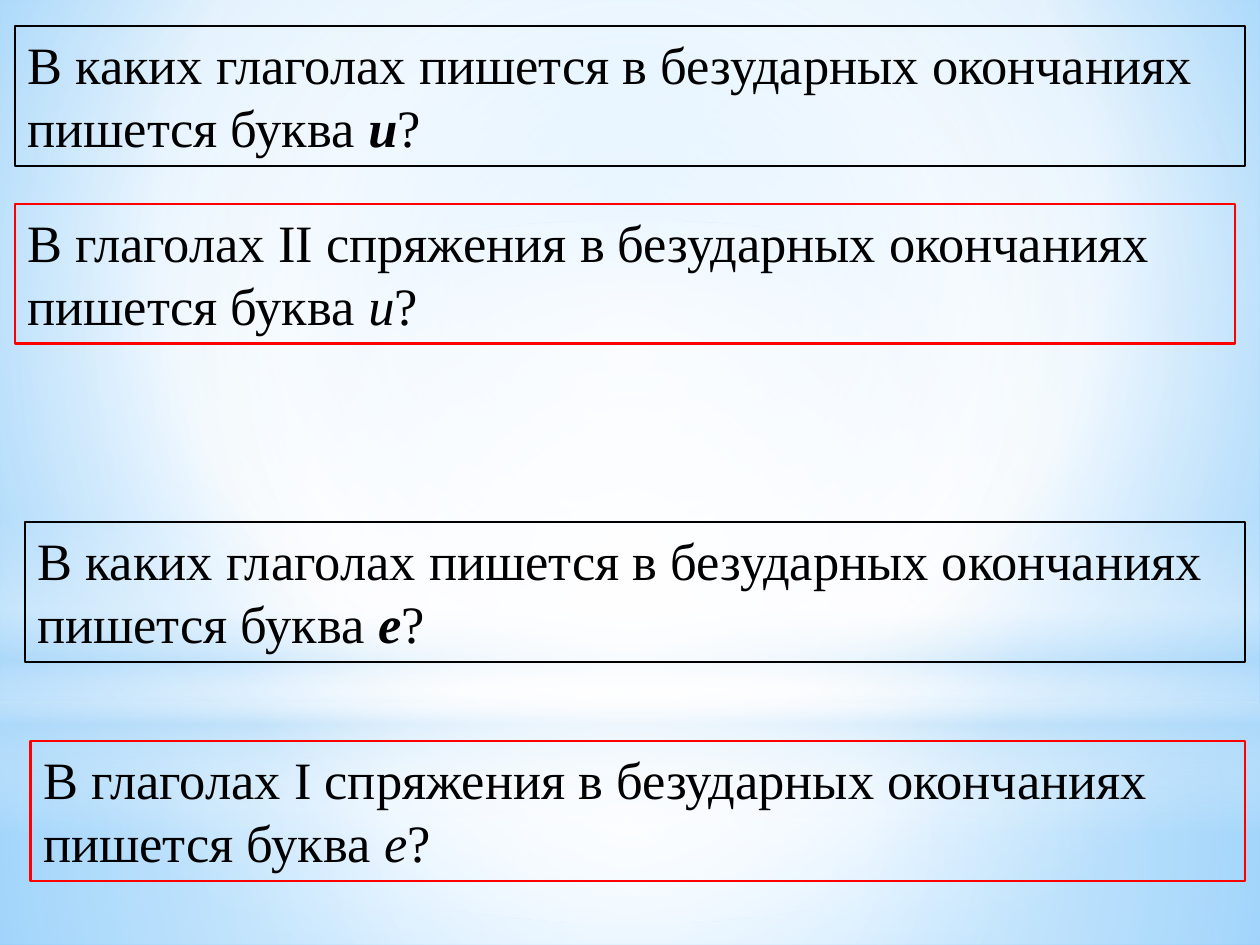
from lxml import etree
from pptx import Presentation
from pptx.dml.color import RGBColor
from pptx.enum.shapes import MSO_SHAPE
from pptx.enum.text import MSO_AUTO_SIZE
from pptx.oxml.ns import qn
from pptx.util import Cm, Pt

RECTANGLE, OVAL = MSO_SHAPE.RECTANGLE, MSO_SHAPE.OVAL
GROW = MSO_AUTO_SIZE.SHAPE_TO_FIT_TEXT
WIDTH, HEIGHT = 25.4, 19.05
BOX_HEIGHT = 2.82

COLORS = {
    "text": "000000", "question": "000000", "answer": "FF0000",
    "white": "FFFFFF", "pale": "B4DCFA", "sky": "9ED5FF", "blue": "5BB9FF",
}
LINE_WIDTHS = {"question": 1, "answer": 1.5}
LETTER_STYLES = {
    "question": {"bold": True, "italic": True},
    "answer": {"italic": True},
}
TEXT_STYLE = {"name": "Times New Roman", "size": Pt(30)}

QUESTION = "В каких глаголах пишется в безударных окончаниях пишется буква "
ANSWER = "В глаголах {} спряжения в безударных окончаниях пишется буква "
BOXES = [
    ("question", QUESTION, "и", 0.3, 0.53, 24.8),
    ("answer", ANSWER.format("II"), "и", 0.3, 4.11, 24.6),
    ("question", QUESTION, "е", 0.5, 10.52, 24.6),
    ("answer", ANSWER.format("I"), "е", 0.62, 14.94, 24.48),
]

CENTER = (50, 50, 50, 50)
BACKDROP = [(0, "sky", 100), (60, "white", 100), (100, "blue", 100)]
GLOWS = [
    (RECTANGLE, 14.17, 4.88, CENTER,
     [(0, "white", 91), (37, "white", 76), (100, "pale", 79)]),
    (RECTANGLE, 0, 14.17, CENTER,
     [(0, "white", 89), (48, "white", 62), (100, "pale", 79)]),
    (RECTANGLE, 10.46, 6.35, None,
     [(0, "white", 0), (29, "white", 30), (45, "pale", 40),
      (55, "white", 26), (65, "pale", 60), (100, "white", 0)]),
    (OVAL, 4.45, 14.17, CENTER, [(0, "white", 100), (56, "white", 0)]),
]


def add_part(parent, tag, **attributes):
    part = etree.SubElement(parent, qn(tag))
    for key, value in attributes.items():
        part.set(key, str(value))
    return part


def paint_gradient(owner, fill, stops, focus):
    fill.gradient()
    gradient = owner.element.find(".//" + qn("a:gradFill"))
    for child in list(gradient):
        gradient.remove(child)
    stop_list = add_part(gradient, "a:gsLst")
    for position, color, opacity in stops:
        stop = add_part(stop_list, "a:gs", pos=position * 1000)
        tint = add_part(stop, "a:srgbClr", val=COLORS[color])
        if opacity < 100:
            add_part(tint, "a:alpha", val=opacity * 1000)
    if focus:
        circle = add_part(gradient, "a:path", path="circle")
        edges = {side: edge * 1000 for side, edge in zip("ltrb", focus)}
        add_part(circle, "a:fillToRect", **edges)
    else:
        add_part(gradient, "a:lin", ang=90 * 60000, scaled=0)


def add_box(slide, role, sentence, letter, left, top, width):
    box = slide.shapes.add_textbox(Cm(left), Cm(top), Cm(width), Cm(BOX_HEIGHT))
    box.line.color.rgb = RGBColor.from_string(COLORS[role])
    box.line.width = Pt(LINE_WIDTHS[role])
    frame = box.text_frame
    frame.word_wrap = True
    frame.auto_size = GROW
    paragraph = frame.paragraphs[0]
    for wording, emphasis in ((sentence, {}), (letter, LETTER_STYLES[role]), ("?", {})):
        run = paragraph.add_run()
        run.text = wording
        for key, value in {**TEXT_STYLE, **emphasis}.items():
            setattr(run.font, key, value)
        run.font.color.rgb = RGBColor.from_string(COLORS["text"])


def main():
    deck = Presentation()
    deck.slide_width, deck.slide_height = Cm(WIDTH), Cm(HEIGHT)
    slide = deck.slides.add_slide(deck.slide_layouts[6])
    paint_gradient(slide, slide.background.fill, BACKDROP, (20, 10, 20, 60))
    for outline, top, height, focus, stops in GLOWS:
        glow = slide.shapes.add_shape(outline, 0, Cm(top), Cm(WIDTH), Cm(height))
        glow.shadow.inherit = False
        glow.line.fill.background()
        paint_gradient(glow, glow.fill, stops, focus)
    for box in BOXES:
        add_box(slide, *box)
    deck.save("out.pptx")


if __name__ == "__main__":
    main()
